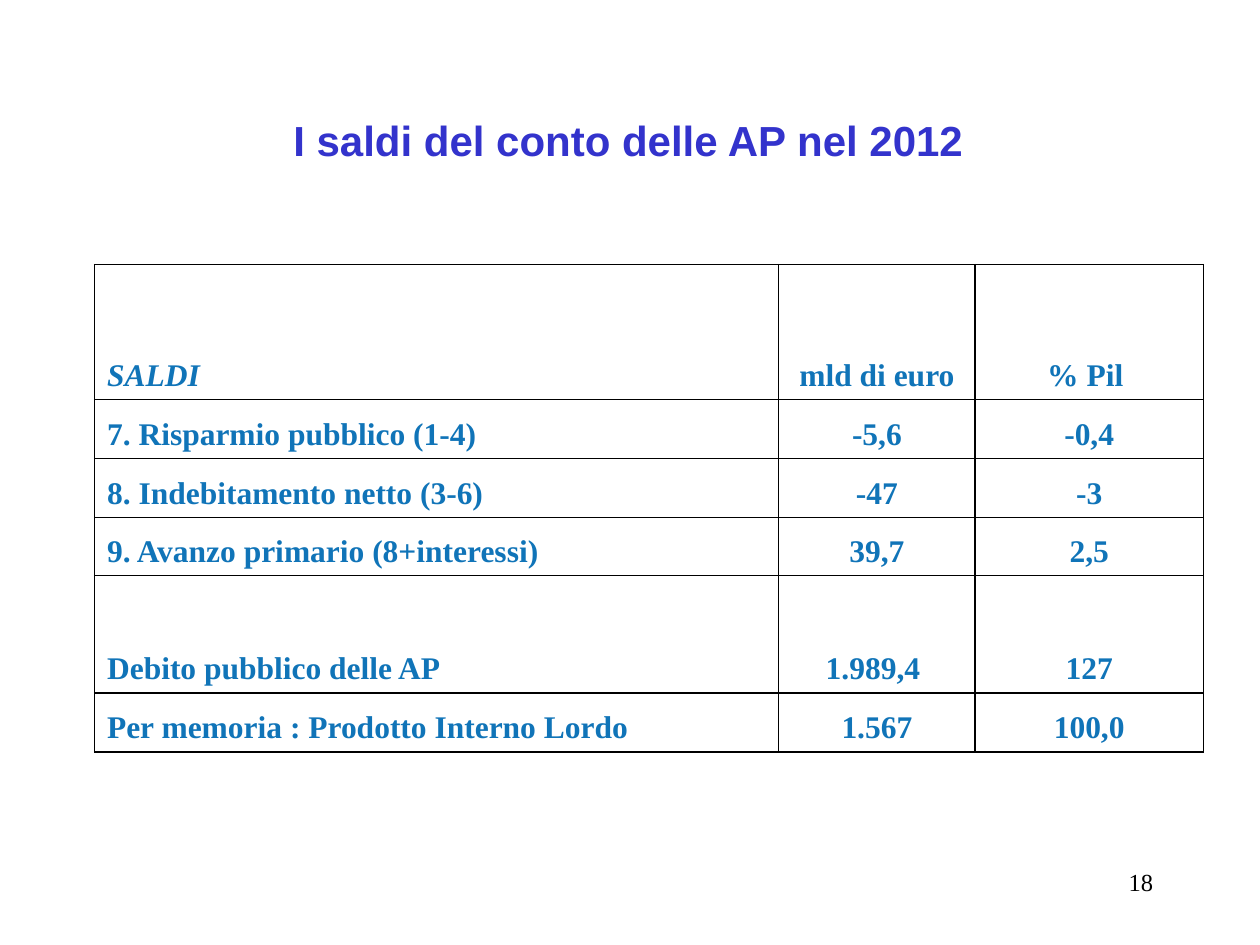
from dataclasses import dataclass

from lxml.etree import SubElement
from pptx import Presentation
from pptx.dml.color import RGBColor as Color
from pptx.enum.text import MSO_ANCHOR as Anchor, PP_ALIGN as Align
from pptx.oxml.ns import qn
from pptx.util import Inches, Pt


@dataclass(frozen=True)
class Theme:
    heading_font: str = "Arial"
    body_font: str = "Times New Roman"
    heading: str = "3333CC"
    table_text: str = "1074B8"
    ink: str = "000000"
    heading_size: int = 24
    table_size: int = 18
    number_size: int = 14
    border_width: int = 1


class SlideBuilder:
    def __init__(self, slide, theme):
        self.slide = slide
        self.theme = theme

    def set_text(self, frame, text, font, size, color, align, bold=False, italic=False):
        frame.text = text
        paragraph = frame.paragraphs[0]
        paragraph.alignment = align
        for run in paragraph.runs:
            run.font.name = font
            run.font.size = Pt(size)
            run.font.color.rgb = Color.from_string(color)
            run.font.bold = bold
            run.font.italic = italic

    def text_box(self, place, text, font, size, color, align, wrap=True, bold=False):
        shape = self.slide.shapes.add_textbox(*map(Inches, place))
        shape.text_frame.word_wrap = wrap
        self.set_text(shape.text_frame, text, font, size, color, align, bold)

    def border(self, cell):
        properties = cell._tc.get_or_add_tcPr()
        for index, side in enumerate(("lnL", "lnR", "lnT", "lnB")):
            line = properties.makeelement(
                qn(f"a:{side}"), {"w": str(Pt(self.theme.border_width))})
            fill = SubElement(line, qn("a:solidFill"))
            SubElement(fill, qn("a:srgbClr"), val=self.theme.ink)
            properties.insert(index, line)

    def table(self, left, top, widths, heights, rows):
        place = map(Inches, (left, top, sum(widths), sum(heights)))
        table = self.slide.shapes.add_table(len(rows), len(widths), *place).table
        table.first_row = table.horz_banding = False
        for column, width in zip(table.columns, widths):
            column.width = Inches(width)
        for row, height in zip(table.rows, heights):
            row.height = Inches(height)
        for row_index, values in enumerate(rows):
            for column_index, value in enumerate(values):
                cell = table.cell(row_index, column_index)
                cell.fill.background()
                cell.vertical_anchor = Anchor.BOTTOM
                self.border(cell)
                is_label = column_index == 0
                self.set_text(cell.text_frame, value, self.theme.body_font,
                              self.theme.table_size, self.theme.table_text,
                              Align.LEFT if is_label else Align.CENTER,
                              bold=True, italic=is_label and row_index == 0)


def main():
    presentation = Presentation()
    presentation.slide_width, presentation.slide_height = Inches(10), Inches(7.5)
    theme = Theme()
    builder = SlideBuilder(
        presentation.slides.add_slide(presentation.slide_layouts[6]), theme)

    builder.text_box((7.17, 6.83, 2.08, 0.5), "18", theme.body_font,
                     theme.number_size, theme.ink, Align.RIGHT)
    balances = [
        ("SALDI", "mld di euro", "% Pil "),
        ("7. Risparmio pubblico (1-4)", "-5,6", "-0,4"),
        ("8. Indebitamento netto (3-6)", "-47", "-3"),
        ("9. Avanzo primario (8+interessi)", "39,7", "2,5"),
        ("Debito pubblico delle AP", "1.989,4 ", "127"),
        ("Per memoria : Prodotto Interno Lordo", "1.567", "100,0"),
    ]
    builder.table(0.75, 2.1, (5.43, 1.56, 1.81),
                  (1.07, 0.47, 0.47, 0.46, 0.93, 0.47), balances)
    builder.text_box((2.23, 0.86, 5.56, 0.51), "I saldi del conto delle AP nel 2012",
                     theme.heading_font, theme.heading_size, theme.heading,
                     Align.LEFT, wrap=False, bold=True)
    presentation.save("out.pptx")


if __name__ == "__main__":
    main()
